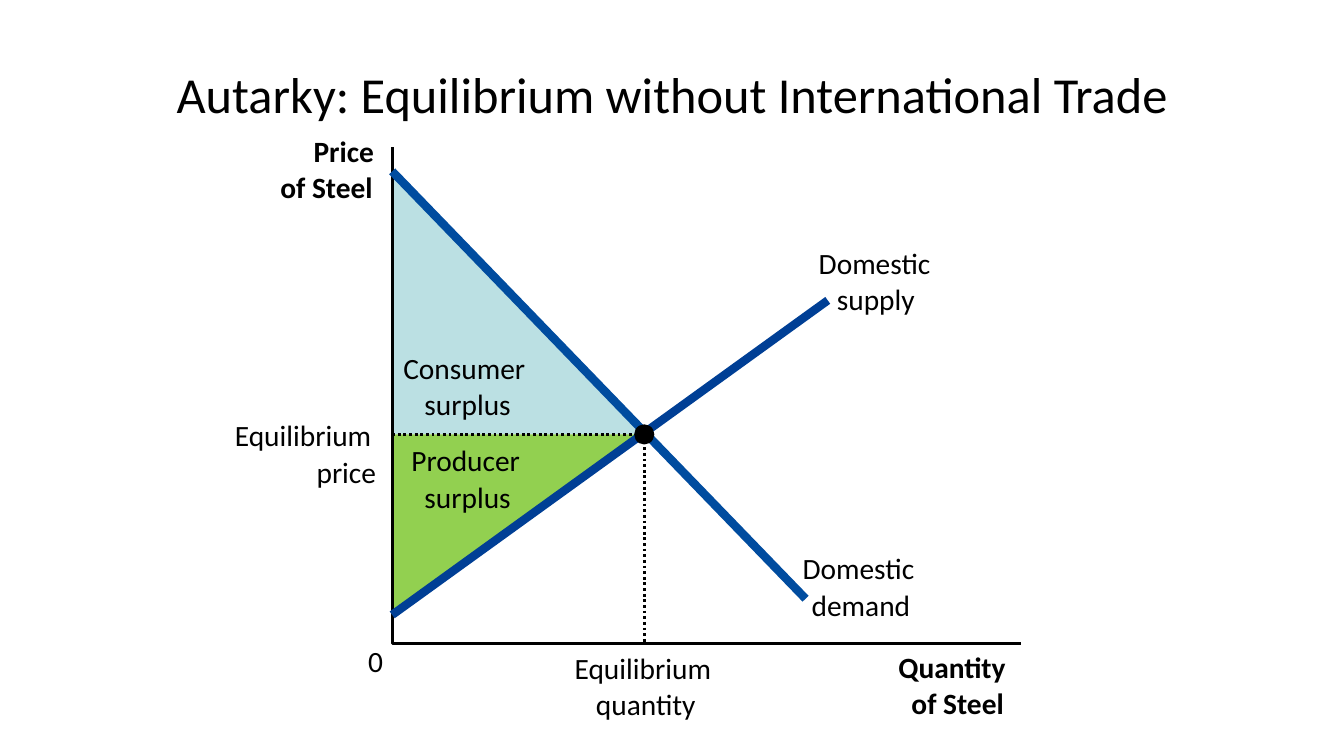
"""Builds the autarky slide: supply, demand and surplus in a closed steel market."""
from lxml import etree
from pptx import Presentation
from pptx import util as u
from pptx.dml.color import RGBColor
from pptx.enum import dml, shapes, text
from pptx.oxml.ns import qn

COLORS = {
    "ink": "000000",
    "consumer": "BBE0E3",
    "producer": "92D050",
    "supply": "003F95",
    "demand": "004C9F",
}
FONT = "Calibri"
LINE_PITCH = 0.36
LINE_HEIGHT = 0.35
DOT_SIZE = 0.2

AXIS_TOP = (3.89, 1.46)
ORIGIN = (3.89, 6.38)
AXIS_RIGHT = (10.13, 6.38)
EQUILIBRIUM = (6.39, 4.31)
EQUILIBRIUM_PRICE = (ORIGIN[0], EQUILIBRIUM[1])
EQUILIBRIUM_QUANTITY = (EQUILIBRIUM[0], ORIGIN[1])
DEMAND_START, DEMAND_END = (3.89, 1.7), (7.99, 5.94)
SUPPLY_START, SUPPLY_END = (3.89, 6.1), (8.21, 2.98)

LABELS = [
    (1.32, True, [("Price", 3.11, 0.6), ("of Steel", 2.78, 0.92)]),
    (6.38, False, [("0", 3.65, 0.15)]),
    (6.44, True, [("Quantity", 8.91, 1.08), ("of Steel", 9.04, 0.92)]),
    (3.47, False, [("Consumer", 4, 1.22), ("surplus", 4.21, 0.87)]),
    (4.39, False, [("Producer", 4.08, 1.09), ("surplus", 4.21, 0.87)]),
    (2.43, False, [("Domestic", 8.12, 1.12), ("supply", 8.3, 0.78)]),
    (5.46, False, [("Domestic", 7.96, 1.12), ("demand", 8.05, 0.98)]),
    (4.14, False, [("Equilibrium", 2.33, 1.37), ("price", 3.14, 0.6)]),
    (6.45, False, [("Equilibrium", 5.7, 1.37), ("quantity", 5.91, 1.02)]),
]


def color(name):
    """Return the named colour."""
    return RGBColor.from_string(COLORS[name])


def add_run(paragraph, content, size, bold=False):
    """Add a formatted run to a paragraph."""
    run = paragraph.add_run()
    run.text = content
    run.font.name = FONT
    run.font.size = u.Pt(size)
    run.font.bold = bold
    run.font.color.rgb = color("ink")


def set_title(slide, content):
    """Place and fill the title placeholder."""
    title = slide.shapes.title
    title.left, title.top = u.Inches(0.67), u.Inches(0.3)
    title.width, title.height = u.Inches(12), u.Inches(1.25)
    title.text_frame.vertical_anchor = text.MSO_ANCHOR.MIDDLE
    paragraph = title.text_frame.paragraphs[0]
    paragraph.alignment = text.PP_ALIGN.CENTER
    add_run(paragraph, content, 36)


def add_label(slide, top, bold, lines):
    """Add a label whose lines are stacked at an even pitch."""
    for index, (content, left, width) in enumerate(lines):
        box = slide.shapes.add_textbox(
            u.Inches(left), u.Inches(top + index * LINE_PITCH),
            u.Inches(width), u.Inches(LINE_HEIGHT))
        frame = box.text_frame
        frame.margin_left = frame.margin_right = 0
        frame.margin_top = frame.margin_bottom = 0
        frame.word_wrap = False
        frame.auto_size = text.MSO_AUTO_SIZE.SHAPE_TO_FIT_TEXT
        add_run(frame.paragraphs[0], content, 21, bold)


def add_outline(slide, points, close):
    """Add a freeform through the given points."""
    corners = [(u.Inches(x), u.Inches(y)) for x, y in points]
    builder = slide.shapes.build_freeform(*corners[0])
    builder.add_line_segments(corners[1:], close=close)
    shape = builder.convert_to_shape()
    shape.shadow.inherit = False
    return shape


def add_area(slide, points, fill):
    """Add a filled area without an outline."""
    shape = add_outline(slide, points, True)
    shape.fill.solid()
    shape.fill.fore_color.rgb = color(fill)
    shape.line.fill.background()


def add_polyline(slide, points, dash=None):
    """Add an open unfilled line in ink."""
    shape = add_outline(slide, points, False)
    shape.fill.background()
    shape.line.color.rgb = color("ink")
    shape.line.width = u.Pt(2)
    if dash:
        shape.line.dash_style = dash


def add_curve(slide, start, end, stroke):
    """Add a straight supply or demand curve."""
    connector = slide.shapes.add_connector(
        shapes.MSO_CONNECTOR.STRAIGHT,
        *(u.Inches(value) for value in start + end))
    connector.line.color.rgb = color(stroke)
    connector.line.width = u.Pt(6)
    etree.SubElement(connector._element.spPr, qn("a:effectLst"))


def add_dot(slide, center):
    """Add a round marker centred on a point."""
    left, top = (u.Inches(value - DOT_SIZE / 2) for value in center)
    dot = slide.shapes.add_shape(
        shapes.MSO_SHAPE.OVAL, left, top, u.Inches(DOT_SIZE), u.Inches(DOT_SIZE))
    dot.shadow.inherit = False
    dot.fill.solid()
    dot.fill.fore_color.rgb = color("ink")
    dot.line.fill.background()


def main():
    """Build and save the slide."""
    presentation = Presentation()
    presentation.slide_width = u.Inches(13.33)
    presentation.slide_height = u.Inches(7.5)
    slide = presentation.slides.add_slide(presentation.slide_layouts[5])
    set_title(slide, "Autarky: Equilibrium without International Trade")
    add_area(slide, [EQUILIBRIUM, EQUILIBRIUM_PRICE, DEMAND_START], "consumer")
    add_area(slide, [EQUILIBRIUM, EQUILIBRIUM_PRICE, SUPPLY_START], "producer")
    add_polyline(slide, [AXIS_TOP, ORIGIN, AXIS_RIGHT])
    add_curve(slide, SUPPLY_START, SUPPLY_END, "supply")
    add_curve(slide, DEMAND_START, DEMAND_END, "demand")
    add_polyline(slide, [EQUILIBRIUM_PRICE, EQUILIBRIUM, EQUILIBRIUM_QUANTITY],
                 dml.MSO_LINE.ROUND_DOT)
    add_dot(slide, EQUILIBRIUM)
    for top, bold, lines in LABELS:
        add_label(slide, top, bold, lines)
    presentation.save("out.pptx")


if __name__ == "__main__":
    main()
